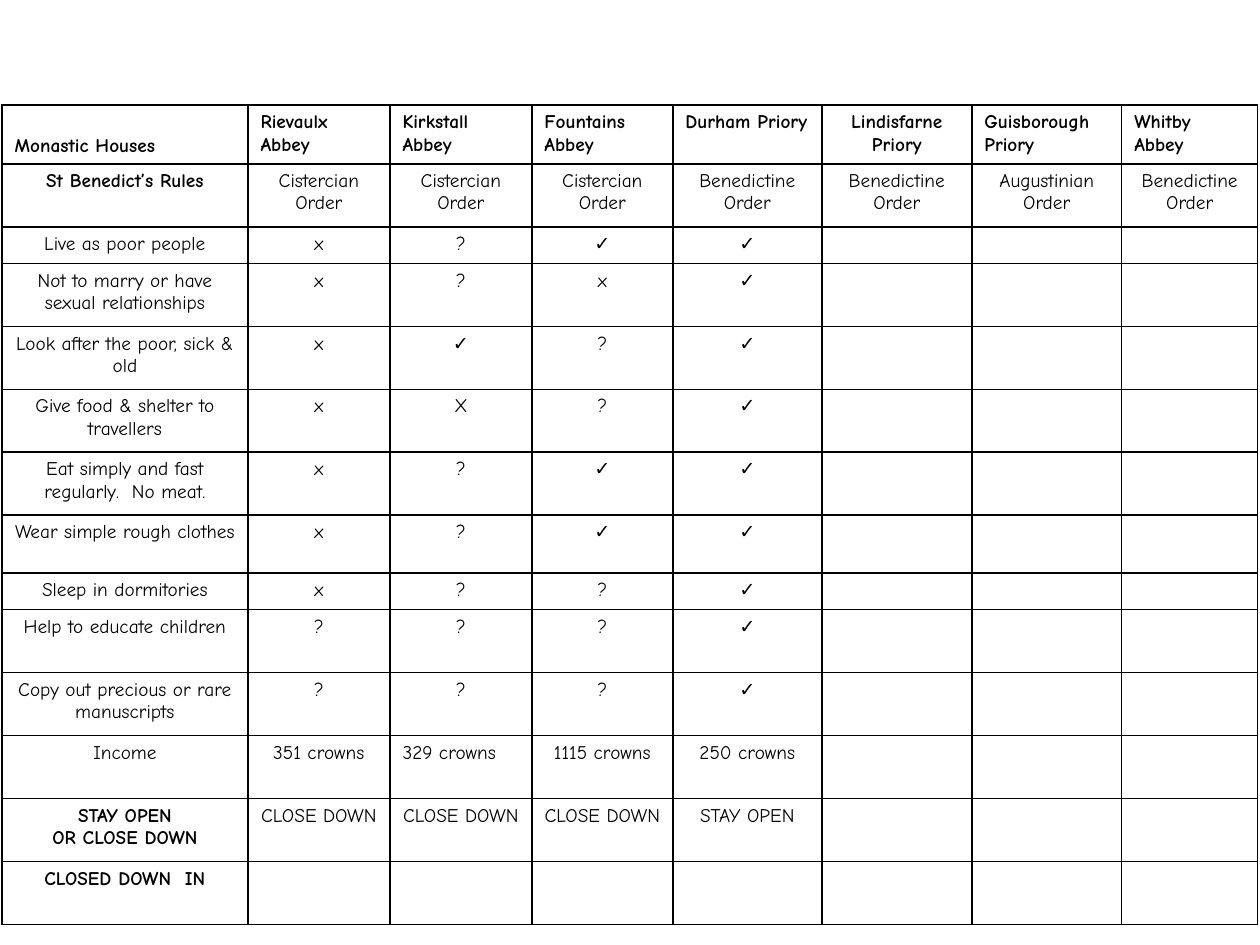
from lxml import etree
from pptx import Presentation
from pptx.dml.color import RGBColor
from pptx.enum.text import MSO_ANCHOR, PP_ALIGN
from pptx.oxml.ns import qn
from pptx.util import Pt

LEFT, CENTER = PP_ALIGN.LEFT, PP_ALIGN.CENTER
BOTTOM = MSO_ANCHOR.BOTTOM

PX = 914400 // 126
THEME = {"font": "Comic Neue", "size": Pt(11), "ink": "000000", "line": Pt(1)}

HOUSES = ["Monastic Houses", "Rievaulx Abbey", "Kirkstall Abbey",
          "Fountains Abbey", "Durham Priory", "Lindisfarne Priory",
          "Guisborough Priory", "Whitby Abbey"]
ORDERS = ["St Benedict’s Rules"] + [
    name + " Order" for name in (
        "Cistercian", "Cistercian", "Cistercian", "Benedictine",
        "Benedictine", "Augustinian", "Benedictine")]
# Each rule is followed by one mark per house judged so far.
RULES = [
    ("Live as poor people", "x?✓✓"),
    ("Not to marry or have sexual relationships", "x?x✓"),
    ("Look after the poor, sick & old", "x✓?✓"),
    ("Give food & shelter to travellers", "xX?✓"),
    ("Eat simply and fast regularly.  No meat.", "x?✓✓"),
    ("Wear simple rough clothes", "x?✓✓"),
    ("Sleep in dormitories", "x??✓"),
    ("Help to educate children", "???✓"),
    ("Copy out precious or rare manuscripts", "???✓"),
]
RESULTS = [
    ["Income", "351 crowns", "329 crowns", "1115 crowns", "250 crowns"],
    ["STAY OPEN\nOR CLOSE DOWN", "CLOSE DOWN", "CLOSE DOWN", "CLOSE DOWN",
     "STAY OPEN"],
    ["CLOSED DOWN  IN"],
]
ROWS = [HOUSES, ORDERS, *([rule, *marks] for rule, marks in RULES), *RESULTS]

ORIGIN = (2, 105)
WIDTHS = [246, 142, 142, 141, 149, 150, 150, 136]
HEIGHTS = [59, 63, 36, 63, 63, 63, 63, 58, 36, 63, 63, 63, 63, 63]

BOLD_LABELS = {ORDERS[0], RESULTS[1][0], RESULTS[2][0]}
LEFT_CELLS = set(HOUSES) - {"Lindisfarne Priory"} | {"329 crowns"}


def set_edges(cell):
    props = cell._tc.get_or_add_tcPr()
    for side in ("lnL", "lnR", "lnT", "lnB"):
        line = etree.SubElement(props, qn("a:" + side), w=str(THEME["line"]))
        fill = etree.SubElement(line, qn("a:solidFill"))
        etree.SubElement(fill, qn("a:srgbClr"), val=THEME["ink"])


def fill_cell(cell, text, bold):
    set_edges(cell)
    cell.fill.background()
    cell.text = text
    for para in cell.text_frame.paragraphs:
        para.alignment = LEFT if text in LEFT_CELLS else CENTER
        for run in para.runs:
            font = run.font
            font.name, font.size, font.bold = THEME["font"], THEME["size"], bold
            font.color.rgb = RGBColor.from_string(THEME["ink"])
        if not text:
            # An empty cell keeps its row low only with a small end mark.
            etree.SubElement(para._p, qn("a:endParaRPr"),
                             sz=str(int(THEME["size"].pt * 100)))


def main():
    deck = Presentation()
    deck.slide_width, deck.slide_height = 1260 * PX, 945 * PX
    slide = deck.slides.add_slide(deck.slide_layouts[6])
    left, top = ORIGIN
    table = slide.shapes.add_table(
        len(HEIGHTS), len(WIDTHS), left * PX, top * PX,
        sum(WIDTHS) * PX, sum(HEIGHTS) * PX).table
    table.first_row = table.horz_banding = False
    for col, width in zip(table.columns, WIDTHS):
        col.width = width * PX
    for r, (row, height, texts) in enumerate(zip(table.rows, HEIGHTS, ROWS)):
        row.height = height * PX
        for c, cell in enumerate(row.cells):
            text = texts[c] if c < len(texts) else ""
            fill_cell(cell, text, r == 0 or text in BOLD_LABELS)
    table.cell(0, 0).vertical_anchor = BOTTOM
    deck.save("out.pptx")


if __name__ == "__main__":
    main()
